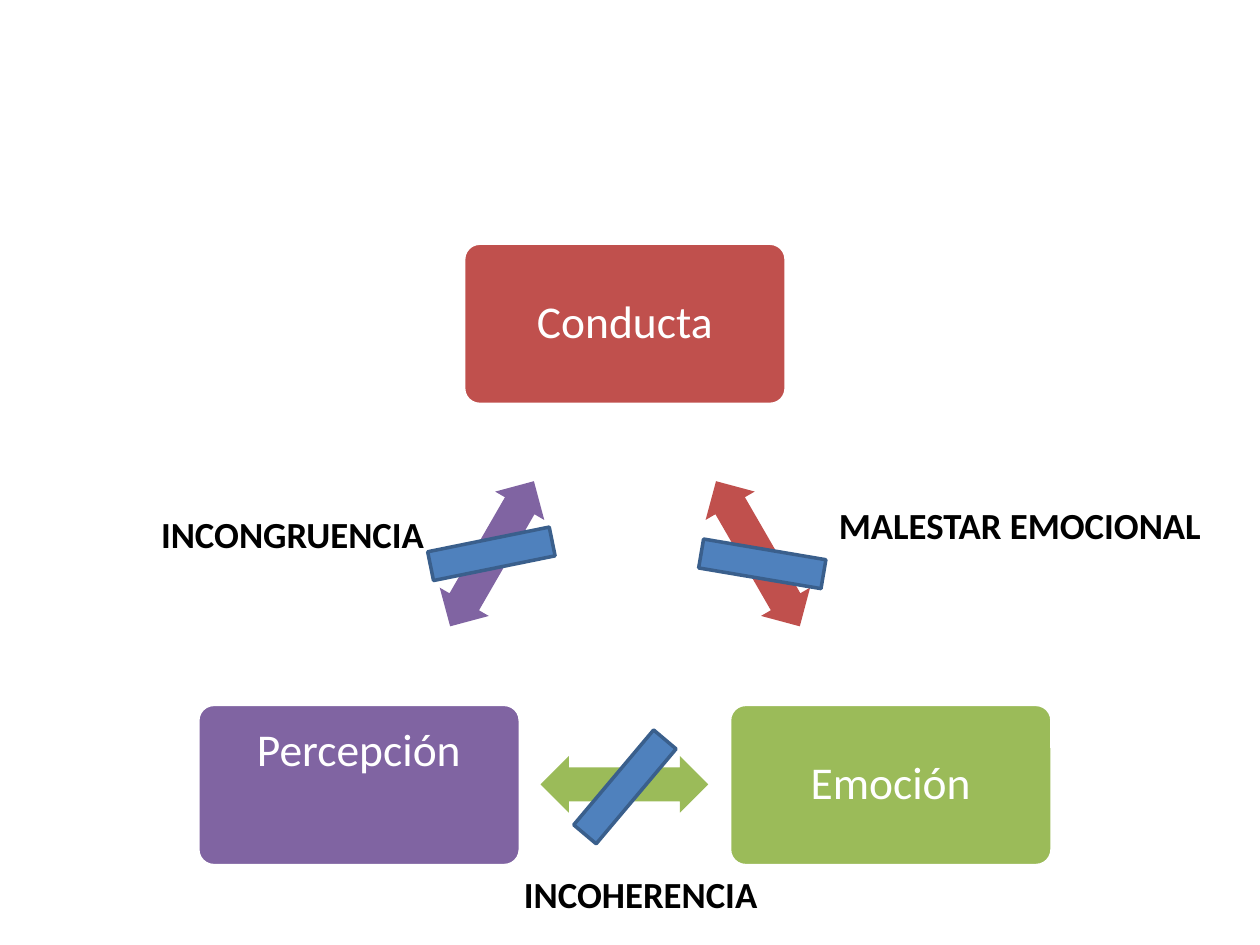
"""Build a slide showing the broken links between conduct, emotion and perception."""
from dataclasses import dataclass

import pptx
import pptx.dml.color
import pptx.enum.shapes
import pptx.enum.text
import pptx.util

Inches = pptx.util.Inches
Pt = pptx.util.Pt
Shapes = pptx.enum.shapes.MSO_SHAPE
Align = pptx.enum.text.PP_ALIGN
Anchor = pptx.enum.text.MSO_ANCHOR

COLORS = {
    "conduct": "C0504D",
    "emotion": "9BBB59",
    "perception": "8064A2",
    "barrier": "4F81BD",
    "barrier_edge": "3A5F8C",
    "white": "FFFFFF",
    "black": "000000",
}
FONT = "Calibri"
INSET = 0.11


@dataclass
class Node:
    text: str
    color: str
    left: float
    top: float
    bottom_inset: float = INSET


@dataclass
class Link:
    color: str
    left: float
    top: float
    rotation: float


@dataclass
class Barrier:
    left: float
    top: float
    rotation: float


@dataclass
class Label:
    text: str
    left: float
    top: float
    width: float
    align: Align


NODES = [
    Node("Conducta", "conduct", 3.68, 1.93),
    Node("Emoción", "emotion", 5.79, 5.59),
    Node("Percepción", "perception", 1.57, 5.59, bottom_inset=0.63),
]
LINKS = [
    Link("conduct", 5.35, 4.17, 60),
    Link("emotion", 4.29, 6, 180),
    Link("perception", 3.24, 4.17, 300),
]
LABELS = [
    Label("INCOHERENCIA", 3.27, 6.87, 3.63, Align.CENTER),
    Label("INCONGRUENCIA", 1.18, 4.01, 2.8, Align.LEFT),
    Label("MALESTAR EMOCIONAL", 6.28, 3.94, 3.63, Align.CENTER),
]
BARRIERS = [
    Barrier(3.23, 3.9, 348.5),
    Barrier(4.29, 5.75, 310.1),
    Barrier(5.38, 3.98, 9.6),
]


def rgb(name: str) -> pptx.dml.color.RGBColor:
    """Return the named palette colour."""
    return pptx.dml.color.RGBColor.from_string(COLORS[name])


def add_filled(slide, kind: Shapes, left: float, top: float, width: float,
               height: float, color: str, edge: str | None = None, rotation: float = 0):
    """Add a flat preset shape with an optional two-point outline."""
    shape = slide.shapes.add_shape(
        kind, Inches(left), Inches(top), Inches(width), Inches(height))
    shape.rotation = rotation
    shape.shadow.inherit = False
    shape.fill.solid()
    shape.fill.fore_color.rgb = rgb(color)
    if edge:
        shape.line.color.rgb = rgb(edge)
        shape.line.width = Pt(2)
    else:
        shape.line.fill.background()
    return shape


def write(frame, text: str, size: int, color: str, align: Align, bold: bool = False):
    """Write one formatted paragraph and return it."""
    frame.word_wrap = True
    frame.text = text
    paragraph = frame.paragraphs[0]
    paragraph.alignment = align
    font = paragraph.runs[0].font
    font.name = FONT
    font.size = Pt(size)
    font.bold = bold
    font.color.rgb = rgb(color)
    return paragraph


def draw_node(slide, node: Node) -> None:
    """Draw a rounded box with its name."""
    box = add_filled(slide, Shapes.ROUNDED_RECTANGLE, node.left, node.top,
                     2.56, 1.28, node.color, "white")
    box.adjustments[0] = 0.1
    frame = box.text_frame
    frame.vertical_anchor = Anchor.MIDDLE
    frame.margin_left = frame.margin_right = frame.margin_top = Inches(INSET)
    frame.margin_bottom = Inches(node.bottom_inset)
    write(frame, node.text, 26, "white", Align.CENTER).line_spacing = 0.9


def draw_link(slide, link: Link) -> None:
    """Draw a two-headed block arrow."""
    arrow = add_filled(slide, Shapes.LEFT_RIGHT_ARROW, link.left, link.top,
                       1.33, 0.45, link.color, rotation=link.rotation)
    arrow.adjustments[0] = 0.6
    arrow.adjustments[1] = 0.5


def draw_label(slide, label: Label) -> None:
    """Draw a bold caption."""
    box = slide.shapes.add_textbox(
        Inches(label.left), Inches(label.top), Inches(label.width), Inches(0.45))
    write(box.text_frame, label.text, 21, "black", label.align, bold=True)
    box.text_frame.auto_size = pptx.enum.text.MSO_AUTO_SIZE.SHAPE_TO_FIT_TEXT


def draw_barrier(slide, barrier: Barrier) -> None:
    """Draw a bar that crosses out a link."""
    add_filled(slide, Shapes.MATH_MINUS, barrier.left, barrier.top, 1.34, 0.99,
               "barrier", "barrier_edge", barrier.rotation)


def main() -> None:
    """Build and save the presentation."""
    deck = pptx.Presentation()
    deck.slide_width = Inches(10)
    deck.slide_height = Inches(7.5)
    slide = deck.slides.add_slide(deck.slide_layouts[6])
    for node, link in zip(NODES, LINKS):
        draw_node(slide, node)
        draw_link(slide, link)
    for label in LABELS:
        draw_label(slide, label)
    for barrier in BARRIERS:
        draw_barrier(slide, barrier)
    deck.save("out.pptx")


if __name__ == "__main__":
    main()
